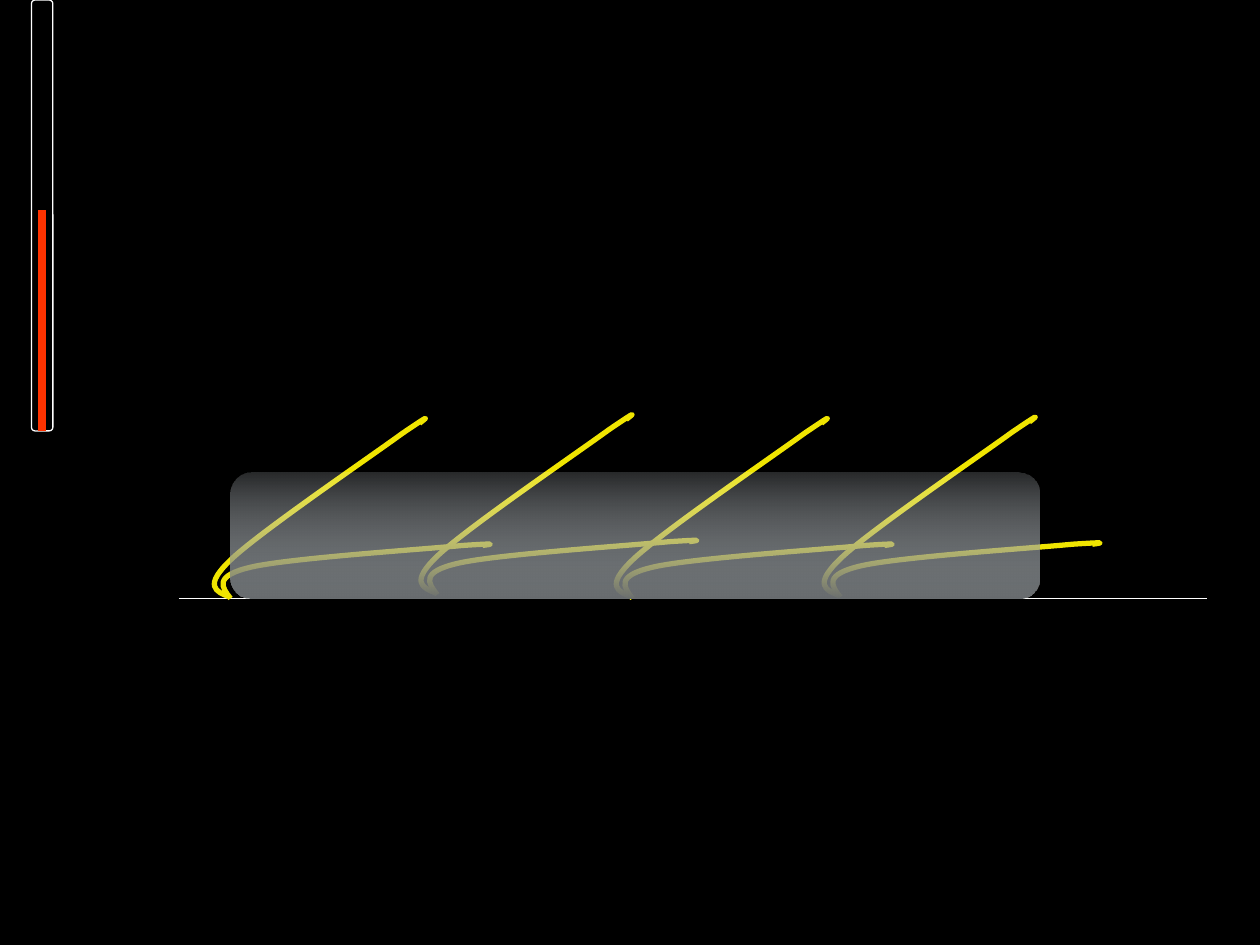
from dataclasses import dataclass

from lxml import etree
from pptx import Presentation
from pptx.dml.color import RGBColor
from pptx.enum import shapes as kinds
from pptx.oxml import ns
from pptx.util import Inches, Pt


@dataclass(frozen=True)
class Theme:
    """Colours and line widths of the slide."""
    background: str = "000000"
    outline: str = "FFFFFF"
    level: str = "FF3300"
    fiber: str = "F0E500"
    film_top: str = "E3EBF1"
    film_bottom: str = "6A6E71"
    film_top_alpha: int = 17
    thin: float = 0.75
    fiber_width: float = 3
    level_width: float = 4.5


THEME = Theme()
CORNER = 0.167
CURVE = [(14, 44), (7, 35), (0, 26), (31, 19), (62, 12), (167, 5),
         (198, 2), (228, 0), (221, 1), (214, 2)]
LOW_FIBERS = [(1.69, 4.31), (3.33, 4.28), (4.88, 4.31), (6.53, 4.3)]
RAISED_OFFSET = (-0.26, -0.49)
RAISED_ROTATION = 329.5


def style_line(shape, color, width):
    """Set the line colour and width of a shape."""
    shape.line.color.rgb = RGBColor.from_string(color)
    shape.line.width = Pt(width)


def add_line(slide, start, end, color, width):
    """Add a straight line without shadow."""
    line = slide.shapes.add_connector(
        kinds.MSO_CONNECTOR.STRAIGHT, *map(Inches, (*start, *end)))
    style_line(line, color, width)
    etree.SubElement(line._element.spPr, ns.qn("a:effectLst"))


def add_rounded_box(slide, box):
    """Add a rounded rectangle without shadow."""
    shape = slide.shapes.add_shape(
        kinds.MSO_SHAPE.ROUNDED_RECTANGLE, *map(Inches, box))
    shape.adjustments[0] = CORNER
    shape.shadow.inherit = False
    return shape


def add_gauge(slide, box):
    """Draw the outlined gauge and its two-part level."""
    left, top, width, height = box
    tube = add_rounded_box(slide, box)
    tube.fill.background()
    style_line(tube, THEME.outline, THEME.thin)
    center = left + width / 2
    bottom = top + height
    for start, end in ((2.58, bottom), (1.67, 2.6)):
        add_line(slide, (center, start), (center, end),
                 THEME.level, THEME.level_width)


def add_fiber(slide, left, top, rotation=0):
    """Draw one hooked fiber as a chain of Bezier curves."""
    builder = slide.shapes.build_freeform(*CURVE[0], scale=Inches(0.01))
    builder.add_line_segments(CURVE[1:], close=False)
    fiber = builder.convert_to_shape(Inches(left), Inches(top))
    path = fiber._element.find(".//" + ns.qn("a:path"))
    segments = path.findall(ns.qn("a:lnTo"))
    for index in range(0, len(segments), 3):
        curve = etree.SubElement(path, ns.qn("a:cubicBezTo"))
        for segment in segments[index:index + 3]:
            curve.append(segment[0])
            path.remove(segment)
    fiber.rotation = rotation
    fiber.shadow.inherit = False
    fiber.fill.background()
    style_line(fiber, THEME.fiber, THEME.fiber_width)


def add_fibers(slide):
    """Place the low row of fibers, then the raised row."""
    for left, top in LOW_FIBERS:
        add_fiber(slide, left, top)
    shift_x, shift_y = RAISED_OFFSET
    for left, top in LOW_FIBERS:
        add_fiber(slide, left + shift_x, top + shift_y, RAISED_ROTATION)


def add_film(slide, box):
    """Cover the fibers with a film that fades out at its top."""
    film = add_rounded_box(slide, box)
    film.line.fill.background()
    film.fill.gradient()
    film.fill.gradient_angle = 270
    stops = film.fill.gradient_stops
    for stop, position, color in zip(
            stops, (0, 1), (THEME.film_top, THEME.film_bottom)):
        stop.position = position
        stop.color.rgb = RGBColor.from_string(color)
    top_color = film._element.spPr.find(".//" + ns.qn("a:srgbClr"))
    alpha = etree.SubElement(top_color, ns.qn("a:alpha"))
    alpha.set("val", str(THEME.film_top_alpha * 1000))


def main():
    """Build and save the slide."""
    presentation = Presentation()
    presentation.slide_width = Inches(10)
    presentation.slide_height = Inches(7.5)
    slide = presentation.slides.add_slide(presentation.slide_layouts[6])
    background = slide.background.fill
    background.solid()
    background.fore_color.rgb = RGBColor.from_string(THEME.background)
    add_line(slide, (1.42, 4.75), (9.58, 4.75), THEME.outline, THEME.thin)
    add_gauge(slide, (0.25, 0, 0.17, 3.42))
    add_fibers(slide)
    add_film(slide, (1.83, 3.75, 6.42, 1))
    presentation.save("out.pptx")


if __name__ == "__main__":
    main()
